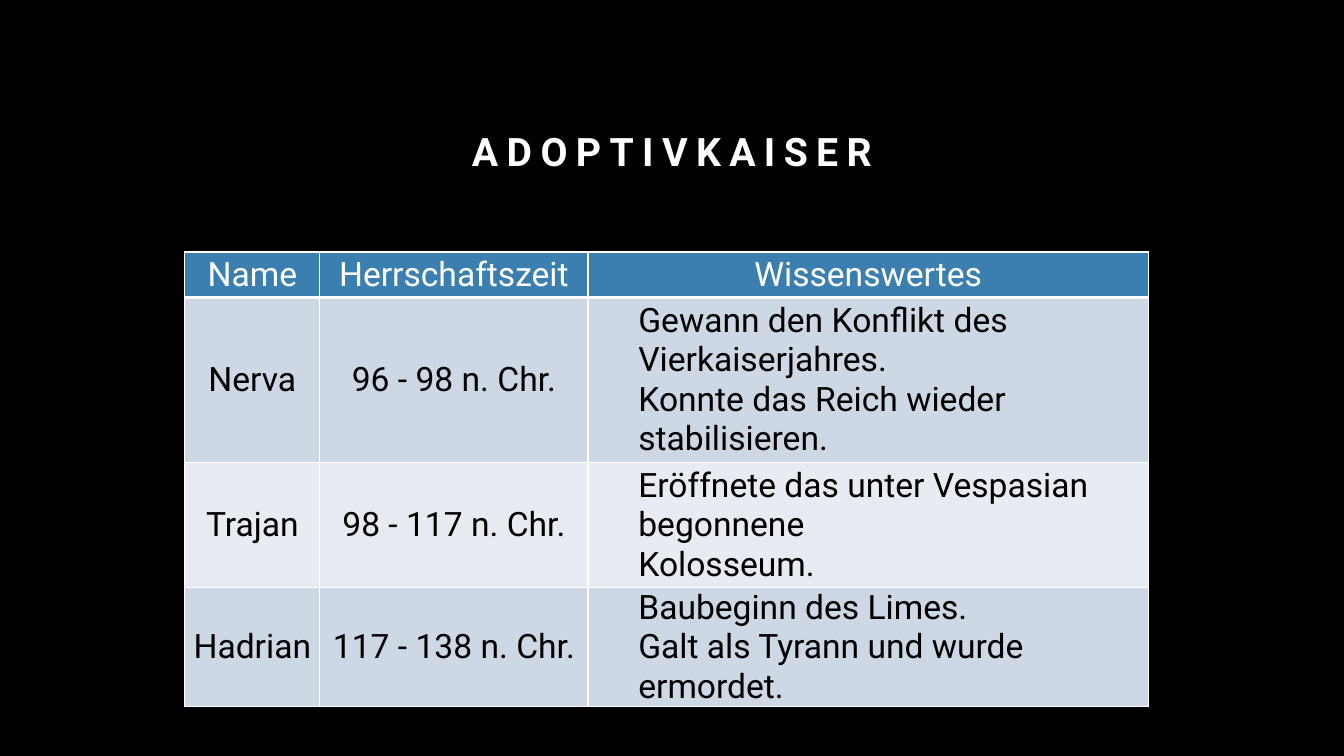
import dataclasses

import pptx
import pptx.dml.color
import pptx.enum.text
import pptx.oxml
import pptx.oxml.ns
import pptx.util

Pt = pptx.util.Pt
ALIGN = pptx.enum.text.PP_ALIGN
ANCHOR = pptx.enum.text.MSO_ANCHOR
FONT = "Roboto"
WHITE = "FFFFFF"
BLACK = "000000"


@dataclasses.dataclass
class TableRow:
    height: float
    fill: str
    texts: tuple[str, str, str]
    header: bool = False


COLUMN_WIDTHS = (96.5, 191.5, 400.3)
ROWS = (
    TableRow(32.4, "3B7FB1", ("Name", "Herrschaftszeit", "Wissenswertes"), header=True),
    TableRow(118, "CED8E4", (
        "Nerva", "96 - 98 n. Chr.",
        "Gewann den Konflikt des Vierkaiserjahres.\vKonnte das Reich wieder stabilisieren.")),
    TableRow(89.3, "E8ECF2", (
        "Trajan", "98 - 117 n. Chr.",
        "Eröffnete das unter Vespasian begonnene\vKolosseum.")),
    TableRow(85, "CED8E4", (
        "Hadrian", "117 - 138 n. Chr.",
        "Baubeginn des Limes.\vGalt als Tyrann und wurde ermordet.")),
)


def color(value: str) -> pptx.dml.color.RGBColor:
    return pptx.dml.color.RGBColor.from_string(value)


def write_text(frame, text: str, *, size: float, fill: str, bold: bool = False,
               align=ALIGN.CENTER, spacing: float = 1, tracking: float = 0,
               indent: float = 0) -> None:
    para = frame.paragraphs[0]
    para.text = text
    para.alignment = align
    para.line_spacing = spacing
    if indent:
        para.level = 1
        properties = para._p.get_or_add_pPr()
        properties.set("marL", str(Pt(indent)))
        properties.set("indent", "0")
    for span in para.runs:
        span.font.name = FONT
        span.font.size = Pt(size)
        span.font.bold = bold
        span.font.color.rgb = color(fill)
        if tracking:
            span._r.get_or_add_rPr().set("spc", str(round(tracking * 100)))


def add_borders(cell, *, bottom: float) -> None:
    properties = cell._tc.get_or_add_tcPr()
    for side, width in (("L", 1), ("R", 1), ("T", 1), ("B", bottom)):
        properties.append(pptx.oxml.parse_xml(
            f'<a:ln{side} {pptx.oxml.ns.nsdecls("a")} w="{Pt(width)}">'
            f'<a:solidFill><a:srgbClr val="{WHITE}"/></a:solidFill></a:ln{side}>'))


def format_cell(cell, row: TableRow, text: str, *, notes: bool) -> None:
    cell.margin_left = cell.margin_right = cell.margin_top = cell.margin_bottom = Pt(0)
    cell.vertical_anchor = ANCHOR.MIDDLE
    add_borders(cell, bottom=3 if row.header else 1)
    cell.fill.solid()
    cell.fill.fore_color.rgb = color(row.fill)
    write_text(cell.text_frame, text, size=24,
               fill=WHITE if row.header else BLACK,
               align=ALIGN.LEFT if notes else ALIGN.CENTER,
               indent=36 if notes else 0)


def add_title(page) -> None:
    box = page.shapes.title
    box.left, box.top, box.width, box.height = Pt(120), Pt(60), Pt(720), Pt(68.4)
    box.text_frame.word_wrap = True
    box.text_frame.vertical_anchor = ANCHOR.BOTTOM
    write_text(box.text_frame, "ADOPTIVKAISER", size=28, fill=WHITE, bold=True,
               spacing=1.2, tracking=6)


def add_emperor_table(page) -> None:
    table = page.shapes.add_table(
        len(ROWS), len(COLUMN_WIDTHS), Pt(132), Pt(180),
        Pt(sum(COLUMN_WIDTHS)), Pt(sum(row.height for row in ROWS))).table
    for column, width in zip(table.columns, COLUMN_WIDTHS):
        column.width = Pt(width)
    last_column = len(COLUMN_WIDTHS) - 1
    for row_index, row in enumerate(ROWS):
        table.rows[row_index].height = Pt(row.height)
        for column_index, text in enumerate(row.texts):
            format_cell(table.cell(row_index, column_index), row, text,
                        notes=column_index == last_column and not row.header)


def main() -> None:
    deck = pptx.Presentation()
    deck.slide_width, deck.slide_height = Pt(960), Pt(540)
    page = deck.slides.add_slide(deck.slide_layouts[5])
    page.background.fill.solid()
    page.background.fill.fore_color.rgb = color(BLACK)
    add_title(page)
    add_emperor_table(page)
    deck.save("out.pptx")


if __name__ == "__main__":
    main()
